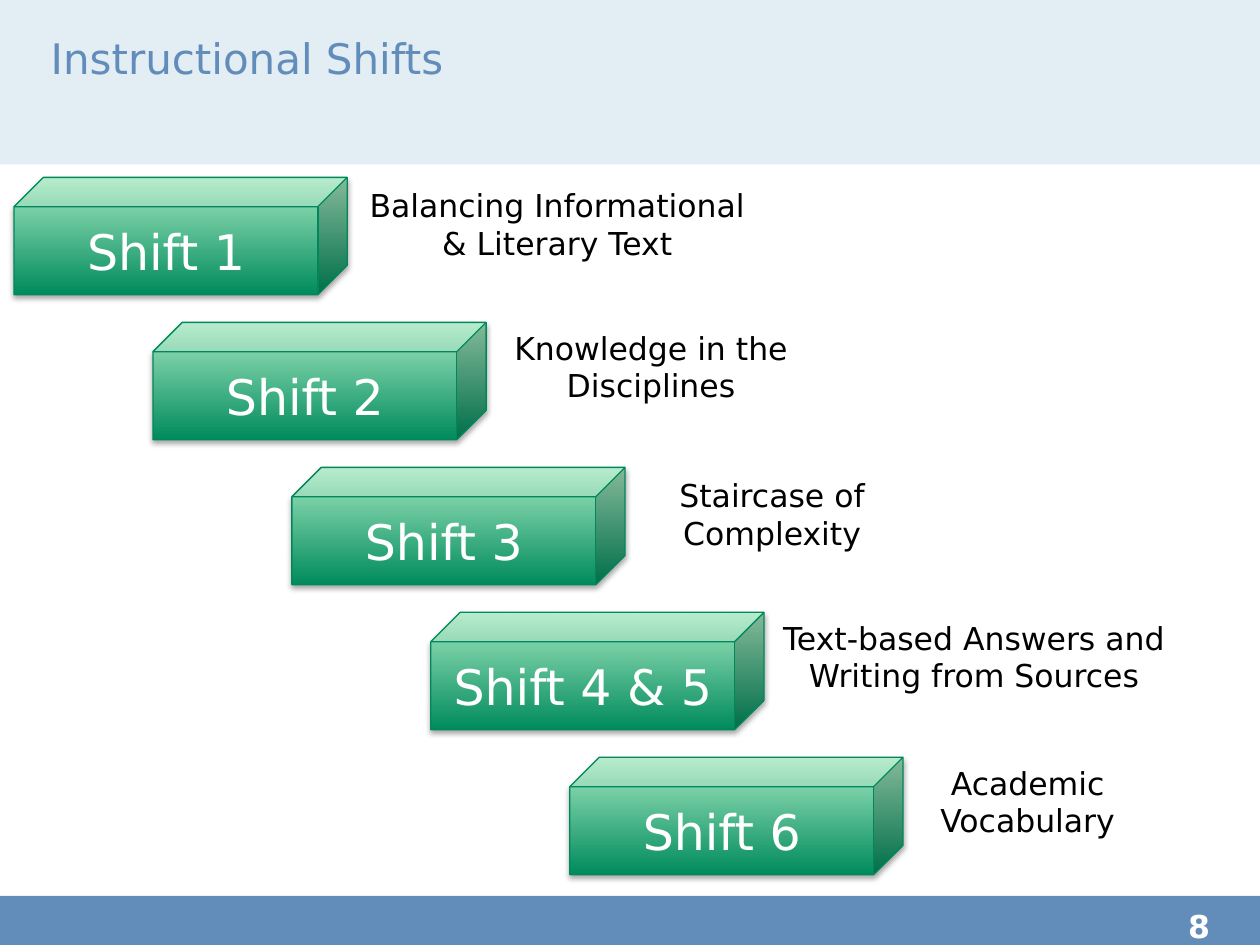
import pptx
import pptx.util
import pptx.dml.color
import pptx.enum.shapes
import pptx.enum.text
import lxml.etree

Pt = pptx.util.Pt
SHAPE = pptx.enum.shapes.MSO_SHAPE
ALIGN = pptx.enum.text.PP_ALIGN
ANCHOR = pptx.enum.text.MSO_ANCHOR
FIT = pptx.enum.text.MSO_AUTO_SIZE
FONT = "DejaVu Sans"
COLORS = {
    "blue": "628DBB", "pale": "E3EDF4", "dark": "008B5D", "light": "A5E8C0",
    "edge": "00885B", "white": "FFFFFF", "black": "000000",
}
SHADOW = """<a:effectLst xmlns:a="http://schemas.openxmlformats.org/drawingml/2006/main">
<a:outerShdw blurRad="40000" dist="23000" dir="5400000" rotWithShape="0">
<a:srgbClr val="000000"><a:alpha val="35000"/></a:srgbClr></a:outerShdw></a:effectLst>"""

# Step name, label, label width, label drop
STEPS = [
    ("Shift 1", "Balancing Informational & Literary Text", 240, 1.5),
    ("Shift 2", "Knowledge in the Disciplines", 188.5, 0),
    ("Shift 3", "Staircase of Complexity", 168, 1.5),
    ("Shift 4 & 5", "Text-based Answers and Writing from Sources", 240, 0),
    ("Shift 6", "Academic Vocabulary", 142.5, 0),
]


def color(name):
    return pptx.dml.color.RGBColor.from_string(COLORS[name])


def write(shape, text, size, ink, align, pads=(0, 0, 0, 0), anchor=ANCHOR.TOP, bold=False):
    frame = shape.text_frame
    frame.word_wrap = True
    frame.auto_size = FIT.NONE
    frame.vertical_anchor = anchor
    (frame.margin_left, frame.margin_top,
     frame.margin_right, frame.margin_bottom) = map(Pt, pads)
    para = frame.paragraphs[0]
    para.text = text
    para.alignment = align
    font = para.font
    font.name, font.size, font.bold = FONT, Pt(size), bold
    font.color.rgb = color(ink)


def add_band(slide, box, fill):
    band = slide.shapes.add_shape(SHAPE.RECTANGLE, *map(Pt, box))
    band.shadow.inherit = False
    band.fill.solid()
    band.fill.fore_color.rgb = color(fill)
    band.line.fill.background()


def add_head(slide, box):
    x, y, w, h = box
    add_band(slide, box, "pale")
    title = slide.shapes.title
    title.left, title.top = Pt(x + 29), Pt(y + 18.7)
    title.width, title.height = Pt(w - 72), Pt(h - 23.7)
    write(title, "Instructional Shifts", 24, "blue", ALIGN.LEFT, (0, 0, 7.2, 3.6))
    # Bring the title in front of its band
    slide.shapes._spTree.append(title._element)


def add_foot(slide, box):
    x, y, w, h = box
    add_band(slide, box, "blue")
    page = slide.shapes.add_textbox(Pt(x + w - 41.5), Pt(y + 6.5), Pt(41), Pt(21.6))
    write(page, "8", 18, "white", ALIGN.LEFT, bold=True)


def add_cube(slide, box, text):
    cube = slide.shapes.add_shape(SHAPE.CUBE, *map(Pt, box))
    cube.fill.gradient()
    cube.fill.gradient_angle = 90
    for stop, name in zip(cube.fill.gradient_stops, ("dark", "light")):
        stop.color.rgb = color(name)
    cube.line.color.rgb = color("edge")
    cube.line.width = Pt(0.75)
    cube._element.spPr.append(lxml.etree.fromstring(SHADOW))
    write(cube, text, 28, "white", ALIGN.CENTER, anchor=ANCHOR.MIDDLE)


def add_stairs(slide, box):
    x, y, w, h = box
    wide, high = 190.4, 67
    across = (w - wide) / (len(STEPS) - 1)
    down = (h - high) / (len(STEPS) - 1)
    for i, (name, text, span, drop) in enumerate(STEPS):
        left, top = x + i * across, y + i * down
        add_cube(slide, (left, top, wide, high), name)
        label = slide.shapes.add_textbox(
            Pt(left + wide), Pt(top + drop), Pt(span), Pt(51))
        write(label, text, 18, "black", ALIGN.CENTER, (7.2, 3.6, 7.2, 3.6))


def main():
    deck = pptx.Presentation()
    deck.slide_width, deck.slide_height = Pt(720), Pt(540)
    slide = deck.slides.add_slide(deck.slide_layouts[5])
    add_foot(slide, (0, 512, 720.5, 30))
    add_head(slide, (0, 0, 720, 94))
    add_stairs(slide, (8, 101.4, 508, 398.4))
    deck.save("out.pptx")


if __name__ == "__main__":
    main()
